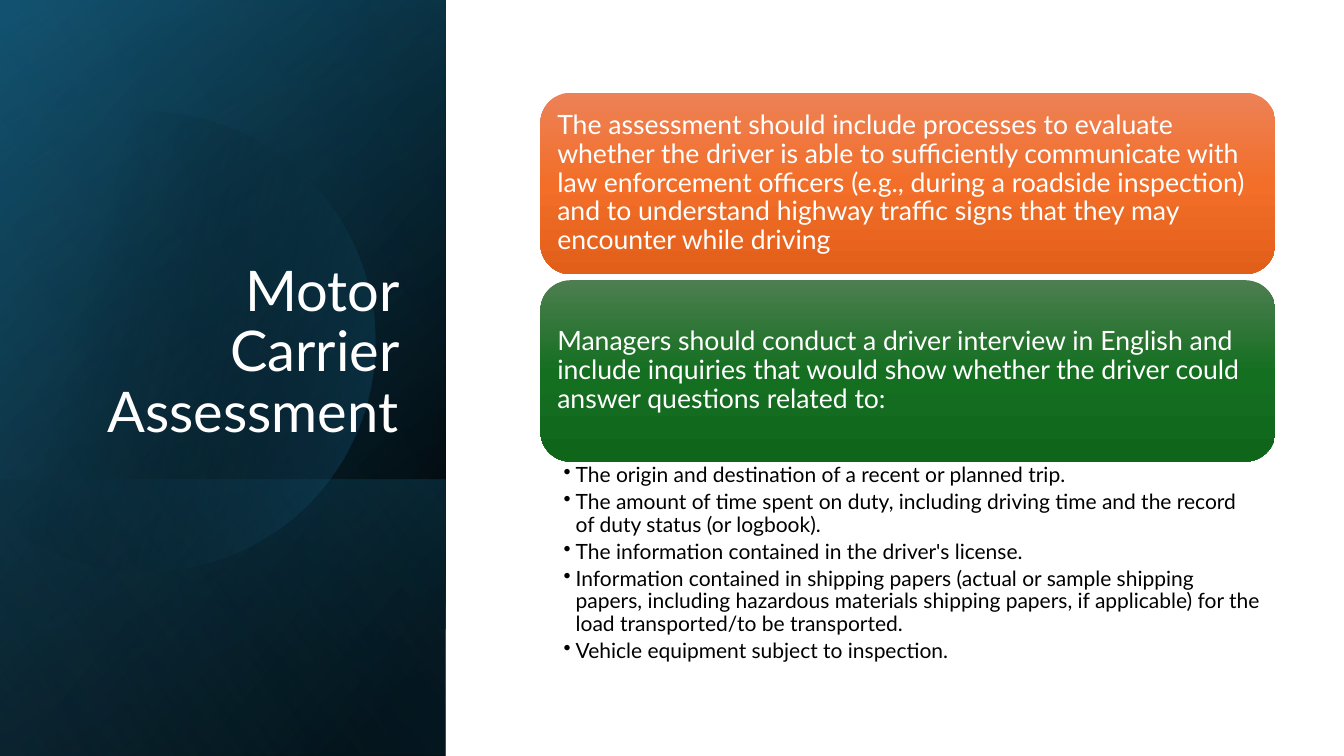
from dataclasses import dataclass
from math import acos, cos, sin

from pptx import Presentation
from pptx.dml.color import RGBColor
from pptx.enum.shapes import MSO_SHAPE
from pptx.enum.text import MSO_ANCHOR, MSO_AUTO_SIZE, PP_ALIGN
from pptx.oxml import parse_xml
from pptx.oxml.ns import nsdecls, qn
from pptx.util import Inches, Pt


@dataclass(frozen=True)
class Theme:
    font: str = "Lato"
    title_size: int = 40
    card_size: int = 19
    bullet_size: int = 15
    line_spacing: float = 0.9
    light: str = "FFFFFF"
    dark: str = "000000"
    teal: str = "156082"
    deep_teal: str = "104862"
    sky: str = "46B1E1"
    orange: tuple = ("ED8257", "F26E29", "E25F1A")
    green: tuple = ("4D7E50", "156F21", "0F661B")


THEME = Theme()
PANEL_WIDTH, PANEL_HEIGHT = 4.42, 7.5
CONTENT_LEFT, CONTENT_WIDTH = 5.36, 7.29
CARD_TOP, CARD_HEIGHT, CARD_GAP = 0.92, 1.8, 0.06

CARDS = [
    (THEME.orange,
     "The assessment should include processes to evaluate whether the driver is able to "
     "sufficiently communicate with law enforcement officers (e.g., during a roadside "
     "inspection) and to understand highway traffic signs that they may encounter while driving"),
    (THEME.green,
     "Managers should conduct a driver interview in English and include inquiries that would "
     "show whether the driver could answer questions related to:"),
]
INTERVIEW_TOPICS = [
    "The origin and destination of a recent or planned trip.",
    "The amount of time spent on duty, including driving time and the record of duty status "
    "(or logbook).",
    "The information contained in the driver's license.",
    "Information contained in shipping papers (actual or sample shipping papers, including "
    "hazardous materials shipping papers, if applicable) for the load transported/to be "
    "transported.",
    "Vehicle equipment subject to inspection.",
]


class SlideBuilder:
    def __init__(self, slide, theme):
        self.slide = slide
        self.theme = theme

    def paint(self, shape, stops, angle):
        """Fill with a linear gradient of (position %, colour, opacity %) stops."""
        shape.shadow.inherit = False
        shape.line.fill.background()
        shape.fill.background()
        stop_xml = "".join(
            f'<a:gs pos="{position * 1000}"><a:srgbClr val="{colour}">'
            f'<a:alpha val="{opacity * 1000}"/></a:srgbClr></a:gs>'
            for position, colour, opacity in stops)
        gradient = parse_xml(
            f'<a:gradFill {nsdecls("a")} rotWithShape="1"><a:gsLst>{stop_xml}</a:gsLst>'
            f'<a:lin ang="{angle * 60000}" scaled="0"/></a:gradFill>')
        properties = shape._element.spPr
        properties.replace(properties.find(qn("a:noFill")), gradient)

    def style(self, paragraph, size, colour):
        paragraph.line_spacing = self.theme.line_spacing
        paragraph.font.name = self.theme.font
        paragraph.font.size = Pt(size)
        paragraph.font.color.rgb = RGBColor.from_string(colour)

    def panel(self, height, stops, angle):
        """Add a turned, mirrored rectangle across the panel, resting on its bottom edge."""
        left = (PANEL_WIDTH - height) / 2
        top = PANEL_HEIGHT - (height + PANEL_WIDTH) / 2
        panel = self.slide.shapes.add_shape(
            MSO_SHAPE.RECTANGLE, Inches(left), Inches(top), Inches(height), Inches(PANEL_WIDTH))
        panel.rotation = 90
        panel._element.spPr.find(qn("a:xfrm")).set("flipH", "1")
        self.paint(panel, stops, angle)

    def cut_disc(self, center_x, center_y, radius, cut_x, stops, angle):
        """Add a disc whose left side is cut off straight at cut_x."""
        reach = acos((cut_x - center_x) / radius)
        steps = 120
        turns = [reach * (2 * step / steps - 1) for step in range(steps + 1)]
        rim = [(Inches(center_x + radius * cos(turn)), Inches(center_y + radius * sin(turn)))
               for turn in turns]
        outline = self.slide.shapes.build_freeform(*rim[0])
        outline.add_line_segments(rim[1:], close=True)
        self.paint(outline.convert_to_shape(), stops, angle)

    def title(self, text, left, top, width, height):
        title = self.slide.shapes.title
        title._element.getparent().append(title._element)  # in front of the panels
        title.left, title.top = Inches(left), Inches(top)
        title.width, title.height = Inches(width), Inches(height)
        frame = title.text_frame
        frame.text = text
        frame.word_wrap = True
        frame.auto_size = MSO_AUTO_SIZE.NONE
        frame.vertical_anchor = MSO_ANCHOR.BOTTOM
        paragraph = frame.paragraphs[0]
        paragraph.alignment = PP_ALIGN.RIGHT
        self.style(paragraph, self.theme.title_size, self.theme.light)

    def card(self, text, top, colours):
        card = self.slide.shapes.add_shape(
            MSO_SHAPE.ROUNDED_RECTANGLE, Inches(CONTENT_LEFT), Inches(top),
            Inches(CONTENT_WIDTH), Inches(CARD_HEIGHT))
        self.paint(card, [(50 * i, colour, 100) for i, colour in enumerate(colours)], 90)
        frame = card.text_frame
        frame.text = text
        frame.word_wrap = True
        frame.vertical_anchor = MSO_ANCHOR.MIDDLE
        frame.margin_left = frame.margin_right = Inches(0.08)
        frame.margin_top = frame.margin_bottom = Inches(0.08)
        frame.paragraphs[0].alignment = PP_ALIGN.LEFT
        self.style(frame.paragraphs[0], self.theme.card_size, self.theme.light)

    def bullets(self, items, top, height):
        box = self.slide.shapes.add_textbox(
            Inches(CONTENT_LEFT), Inches(top), Inches(CONTENT_WIDTH), Inches(height))
        frame = box.text_frame
        frame.text = "\n".join(items)
        frame.word_wrap = True
        frame.margin_left, frame.margin_right = Inches(0.23), Inches(0.15)
        frame.margin_top = frame.margin_bottom = Inches(0.03)
        for paragraph in frame.paragraphs:
            paragraph.level = 1
            paragraph.space_after = Pt(3)
            self.style(paragraph, self.theme.bullet_size, self.theme.dark)
            properties = paragraph._p.get_or_add_pPr()
            properties.set("marL", str(Inches(0.12)))
            properties.set("indent", str(-Inches(0.12)))
            bullet = parse_xml(f'<a:buChar {nsdecls("a")} char="•"/>')
            properties.find(qn("a:defRPr")).addprevious(bullet)


def main():
    deck = Presentation()
    deck.slide_width, deck.slide_height = Inches(13.33), Inches(7.5)
    builder = SlideBuilder(deck.slides.add_slide(deck.slide_layouts[5]), THEME)
    dark, teal = THEME.dark, THEME.teal

    builder.panel(PANEL_HEIGHT, [(8, dark, 100), (100, THEME.deep_teal, 100)], 50)
    builder.panel(PANEL_HEIGHT, [(0, dark, 0), (99, teal, 46)], 30)
    builder.panel(2.74, [(2, teal, 29), (100, dark, 30)], 130)
    builder.cut_disc(1.44, 3.39, 2.28, -0.15, [(29, dark, 0), (100, teal, 43)], 14)
    builder.panel(PANEL_HEIGHT, [(0, dark, 0), (99, THEME.sky, 11)], 120)
    builder.title("Motor Carrier Assessment", 0.64, 1.84, 3.41, 2.62)

    for row, (colours, text) in enumerate(CARDS):
        builder.card(text, CARD_TOP + row * (CARD_HEIGHT + CARD_GAP), colours)
    builder.bullets(INTERVIEW_TOPICS, 4.58, 2.11)

    deck.save("out.pptx")


if __name__ == "__main__":
    main()
